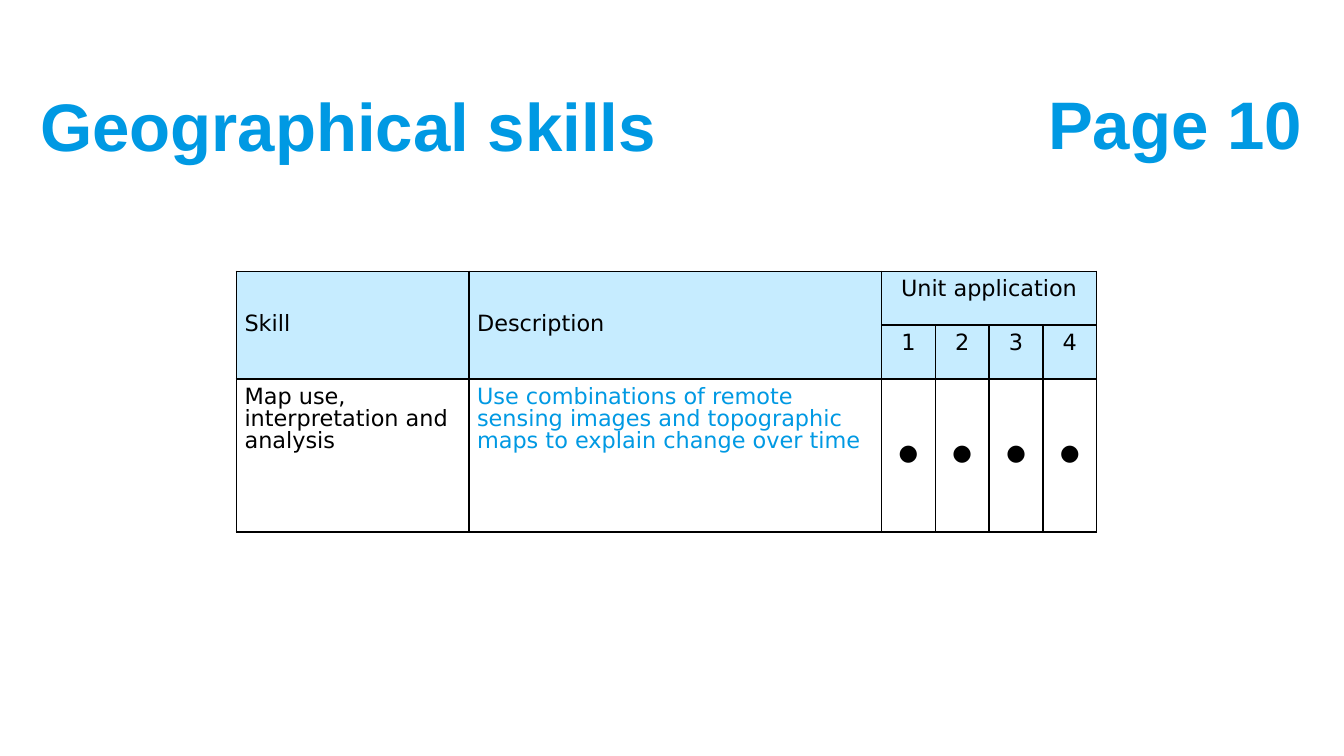
import pptx
import pptx.util
import pptx.dml.color
import pptx.enum.text
import pptx.oxml
import pptx.oxml.ns

W = 10
H = W * 9 / 16
BLUE, PALE, BLACK = "0099E3", "C6ECFF", "000000"
COLS = [1.73, 3.07] + [0.4] * 4
ROWS = [0.4, 0.4, 1.14]
LEFT = pptx.enum.text.PP_ALIGN.LEFT
CENTER = pptx.enum.text.PP_ALIGN.CENTER
TOP = pptx.enum.text.MSO_ANCHOR.TOP
MIDDLE = pptx.enum.text.MSO_ANCHOR.MIDDLE
inch = pptx.util.Inches


def color(value):
    return pptx.dml.color.RGBColor.from_string(value)


def add_run(p, text, size, font, fill, bold=False):
    r = p.add_run()
    r.text = text
    r.font.size = pptx.util.Pt(size)
    r.font.name = font
    r.font.bold = bold
    r.font.color.rgb = color(fill)


def add_heading(s, text, x, y, w, h, anchor, wrap):
    """Place a heading; x, y, w and h are shares of the slide."""
    sp = s.shapes.add_textbox(inch(x * W), inch(y * H), inch(w * W), inch(h * H))
    tf = sp.text_frame
    tf.word_wrap = wrap
    tf.vertical_anchor = anchor
    add_run(tf.paragraphs[0], text, 36, "Arial", BLUE, bold=True)
    return tf


def set_borders(cell):
    tc_pr = cell._tc.get_or_add_tcPr()
    for i, side in enumerate(("lnL", "lnR", "lnT", "lnB")):
        tc_pr.insert(i, pptx.oxml.parse_xml(
            f'<a:{side} {pptx.oxml.ns.nsdecls("a")} w="12700"><a:solidFill>'
            f'<a:srgbClr val="{BLACK}"/></a:solidFill></a:{side}>'))


def fill_cell(cell, text, align=LEFT, anchor=TOP, fill=BLACK, line=12, after=2):
    cell.vertical_anchor = anchor
    p = cell.text_frame.paragraphs[0]
    p.alignment = align
    p.line_spacing = pptx.util.Pt(line)
    p.space_after = pptx.util.Pt(after)
    add_run(p, text, 12, "DejaVu Sans", fill)


def add_grid(s, x, y):
    frame = s.shapes.add_table(len(ROWS), len(COLS), inch(x), inch(y),
                               inch(sum(COLS)), inch(sum(ROWS)))
    table = frame.table
    for column, width in zip(table.columns, COLS):
        column.width = inch(width)
    for i, (row, height) in enumerate(zip(table.rows, ROWS)):
        row.height = inch(height)
        for cell in row.cells:
            cell.margin_left = cell.margin_right = inch(0.06)
            cell.margin_top = cell.margin_bottom = inch(0.06)
            if i < 2:
                cell.fill.solid()
                cell.fill.fore_color.rgb = color(PALE)
            else:
                cell.fill.background()
            set_borders(cell)
    return table


def main():
    prs = pptx.Presentation()
    prs.slide_width, prs.slide_height = inch(W), inch(H)
    s = prs.slides.add_slide(prs.slide_layouts[6])

    # Headings
    add_heading(s, "Geographical skills", 0.02, 0.08, 0.95, 0.17, MIDDLE, True)
    tf = add_heading(s, "Page 10", 0.77, 0.1, 0.21, 0.13, TOP, False)
    tf.auto_size = pptx.enum.text.MSO_AUTO_SIZE.SHAPE_TO_FIT_TEXT

    # Skills table: two header rows
    table = add_grid(s, 1.76, 2.02)
    for col, label in enumerate(("Skill", "Description")):
        table.cell(0, col).merge(table.cell(1, col))
        fill_cell(table.cell(0, col), label, anchor=MIDDLE, after=4)
    table.cell(0, 2).merge(table.cell(0, 5))
    fill_cell(table.cell(0, 2), "Unit application", CENTER)

    # Skill row, with a mark under each unit
    fill_cell(table.cell(2, 0), "Map use, interpretation and analysis")
    fill_cell(table.cell(2, 1), "Use combinations of remote sensing images and "
              "topographic maps to explain change over time", fill=BLUE)
    for unit in range(1, 5):
        fill_cell(table.cell(1, unit + 1), str(unit), CENTER)
        fill_cell(table.cell(2, unit + 1), "●", CENTER, MIDDLE, line=11)

    prs.save("out.pptx")


if __name__ == "__main__":
    main()
